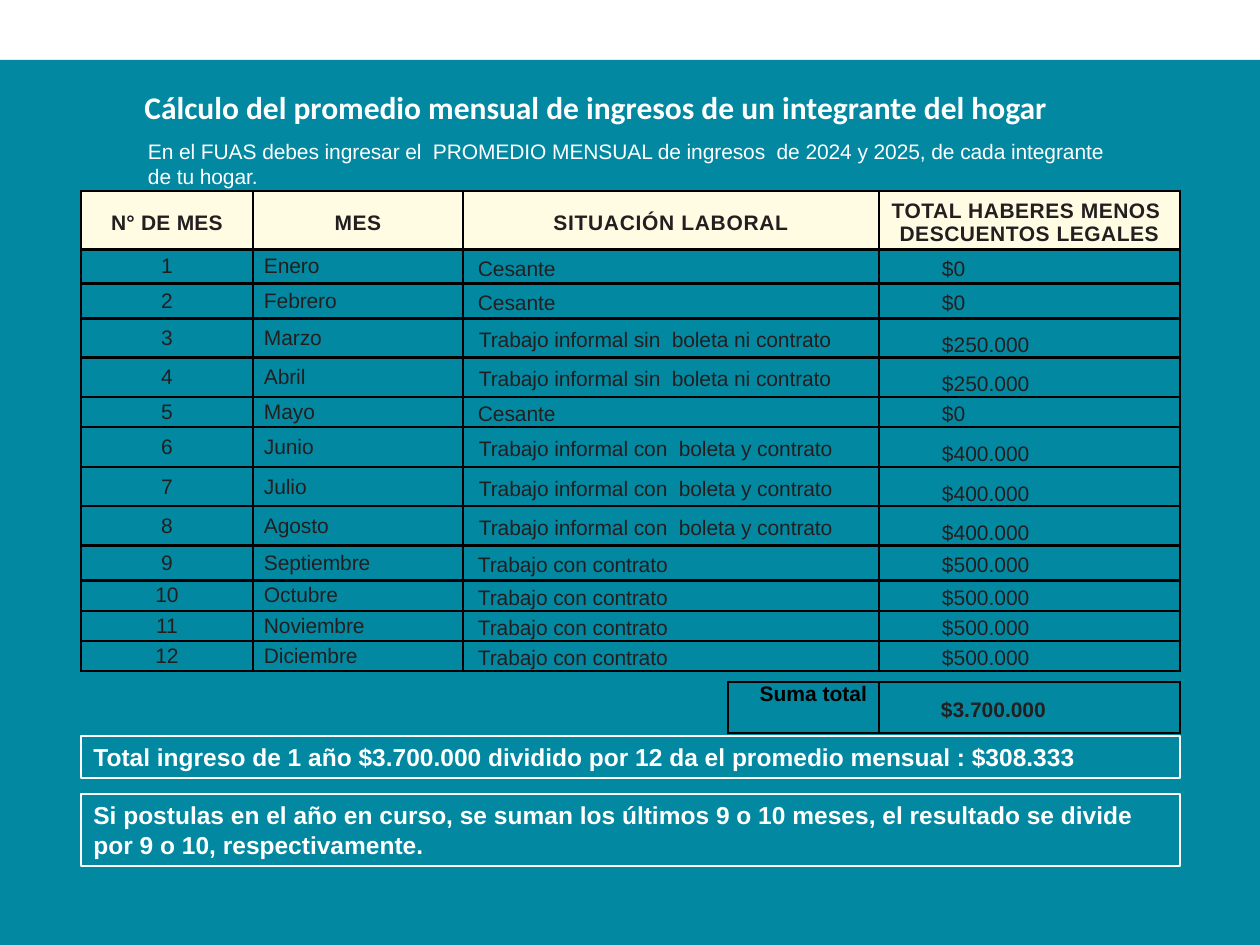
from lxml.etree import SubElement
from pptx import Presentation
from pptx.dml.color import RGBColor
from pptx.enum.shapes import MSO_SHAPE
from pptx.enum.text import MSO_ANCHOR, PP_ALIGN
from pptx.oxml.ns import qn
from pptx.util import Pt

PX = 914400 / 126
TEAL, CREAM, WHITE, BLACK, INK = "0288A1", "FFFCE3", "FFFFFF", "000000", "231F20"


def px(length):
    return round(length * PX)


def color(value):
    return RGBColor.from_string(value)


class SlideBuilder:
    font = "Arial"
    border = 1.5

    def __init__(self, slide):
        self.slide = slide

    def fill_text(self, frame, text, size, ink, bold=False, align=PP_ALIGN.LEFT, spacing=0):
        frame.word_wrap = True
        paragraph = frame.paragraphs[0]
        run = paragraph.add_run()
        run.text = text
        if spacing:
            run._r.get_or_add_rPr().set("spc", str(spacing))
        paragraph.alignment = align
        paragraph.font.name = self.font
        paragraph.font.size = Pt(size)
        paragraph.font.bold = bold
        paragraph.font.color.rgb = color(ink)

    def rectangle(self, left, top, width, height, fill=None, line=None):
        shape = self.slide.shapes.add_shape(
            MSO_SHAPE.RECTANGLE, px(left), px(top), px(width), px(height))
        shape.shadow.inherit = False
        if fill:
            shape.fill.solid()
            shape.fill.fore_color.rgb = color(fill)
        else:
            shape.fill.background()
        if line:
            shape.line.color.rgb = color(line)
            shape.line.width = Pt(0.75)
        else:
            shape.line.fill.background()
        return shape

    def note(self, left, top, width, height, text):
        shape = self.rectangle(left, top, width, height, line=WHITE)
        shape.text_frame.vertical_anchor = MSO_ANCHOR.TOP
        self.fill_text(shape.text_frame, text, 14, WHITE, bold=True)

    def text(self, left, top, width, height, text, size, **style):
        box = self.slide.shapes.add_textbox(px(left), px(top), px(width), px(height))
        self.fill_text(box.text_frame, text, size, WHITE, **style)
        return box.text_frame

    def table(self, left, top, columns, rows):
        frame = self.slide.shapes.add_table(
            len(rows), len(columns), px(left), px(top), px(sum(columns)), px(sum(rows)))
        table = frame.table
        table.first_row = table.horz_banding = False
        for column, width in zip(table.columns, columns):
            column.width = px(width)
        for row, height in zip(table.rows, rows):
            row.height = px(height)
        return table

    def cell(self, cell, text, ink=INK, fill=None, left=0, top=0, right=0,
             anchor=MSO_ANCHOR.MIDDLE, **style):
        cell.margin_left, cell.margin_top = px(left), px(top)
        cell.margin_right, cell.margin_bottom = px(right), 0
        cell.vertical_anchor = anchor
        self.fill_text(cell.text_frame, text, 12, ink, **style)
        # Borders come before the fill in the cell properties
        properties = cell._tc.get_or_add_tcPr()
        for side in ("a:lnL", "a:lnR", "a:lnT", "a:lnB"):
            line = SubElement(properties, qn(side), w=str(Pt(self.border)))
            solid = SubElement(line, qn("a:solidFill"))
            SubElement(solid, qn("a:srgbClr"), val=BLACK)
        if fill:
            cell.fill.solid()
            cell.fill.fore_color.rgb = color(fill)
        else:
            cell.fill.background()


# Header, top inset, letter spacing
HEADERS = [
    ("N° DE MES", 20, 15),
    ("MES", 20, 30),
    ("SITUACIÓN LABORAL", 20, 40),
    ("TOTAL HABERES MENOS  DESCUENTOS LEGALES", 8, 30),
]
NONE = "Cesante"
INFORMAL = "Trabajo informal sin  boleta ni contrato"
RECEIPT = "Trabajo informal con  boleta y contrato"
CONTRACT = "Trabajo con contrato"
# Month, employment, income, row height
MONTHS = [
    ("Enero", NONE, "$0", 34),
    ("Febrero", NONE, "$0", 35),
    ("Marzo", INFORMAL, "$250.000", 39),
    ("Abril", INFORMAL, "$250.000", 39),
    ("Mayo", NONE, "$0", 30),
    ("Junio", RECEIPT, "$400.000", 40),
    ("Julio", RECEIPT, "$400.000", 39),
    ("Agosto", RECEIPT, "$400.000", 39),
    ("Septiembre", CONTRACT, "$500.000", 35),
    ("Octubre", CONTRACT, "$500.000", 30),
    ("Noviembre", CONTRACT, "$500.000", 30),
    ("Diciembre", CONTRACT, "$500.000", 30),
]


def main():
    presentation = Presentation()
    presentation.slide_width, presentation.slide_height = px(1260), px(945)
    builder = SlideBuilder(presentation.slides.add_slide(presentation.slide_layouts[6]))

    # Background panel
    builder.rectangle(0, 60, 1260, 885, fill=TEAL)

    # Title and introduction
    builder.font = "Calibri"
    builder.text(132, 82, 997, 50, "Cálculo del promedio mensual de ingresos "
                 "de un integrante del hogar", 18, bold=True)
    builder.font = "Arial"
    introduction = builder.text(
        117, 132, 1043, 38, "En el FUAS debes ingresar el  PROMEDIO MENSUAL de ingresos  "
        "de 2024 y 2025, de cada integrante  de tu hogar.", 12, spacing=-5)
    introduction.margin_left, introduction.margin_right = px(31), px(30)

    # Monthly income table
    table = builder.table(81, 191, [172, 210, 416, 301],
                          [58] + [height for *_, height in MONTHS])
    for column, (header, top, spacing) in enumerate(HEADERS):
        builder.cell(table.cell(0, column), header, fill=CREAM, top=top, bold=True,
                     anchor=MSO_ANCHOR.TOP, align=PP_ALIGN.CENTER, spacing=spacing)
    for number, (month, employment, income, _) in enumerate(MONTHS, 1):
        informal = employment in (INFORMAL, RECEIPT)
        builder.cell(table.cell(number, 0), str(number), align=PP_ALIGN.CENTER)
        builder.cell(table.cell(number, 1), month, left=11, spacing=-5)
        builder.cell(table.cell(number, 2), employment, left=16 if informal else 15,
                     top=4 if informal else 5, spacing=-5)
        builder.cell(table.cell(number, 3), income, left=63, top=14 if informal else 5)

    # Total
    total = builder.table(728, 682, [151, 301], [51])
    builder.cell(total.cell(0, 0), "Suma total", ink=BLACK, right=12, bold=True,
                 anchor=MSO_ANCHOR.TOP, align=PP_ALIGN.RIGHT)
    builder.cell(total.cell(0, 1), "$3.700.000", left=62, top=5, bold=True)

    # Notes
    builder.note(81, 736, 1099, 42, "Total ingreso de 1 año $3.700.000 dividido por 12 "
                 "da el promedio mensual : $308.333")
    builder.note(81, 794, 1099, 72, "Si postulas en el año en curso, se suman los últimos "
                 "9 o 10 meses, el resultado se divide por 9 o 10, respectivamente.")

    presentation.save("out.pptx")


if __name__ == "__main__":
    main()
